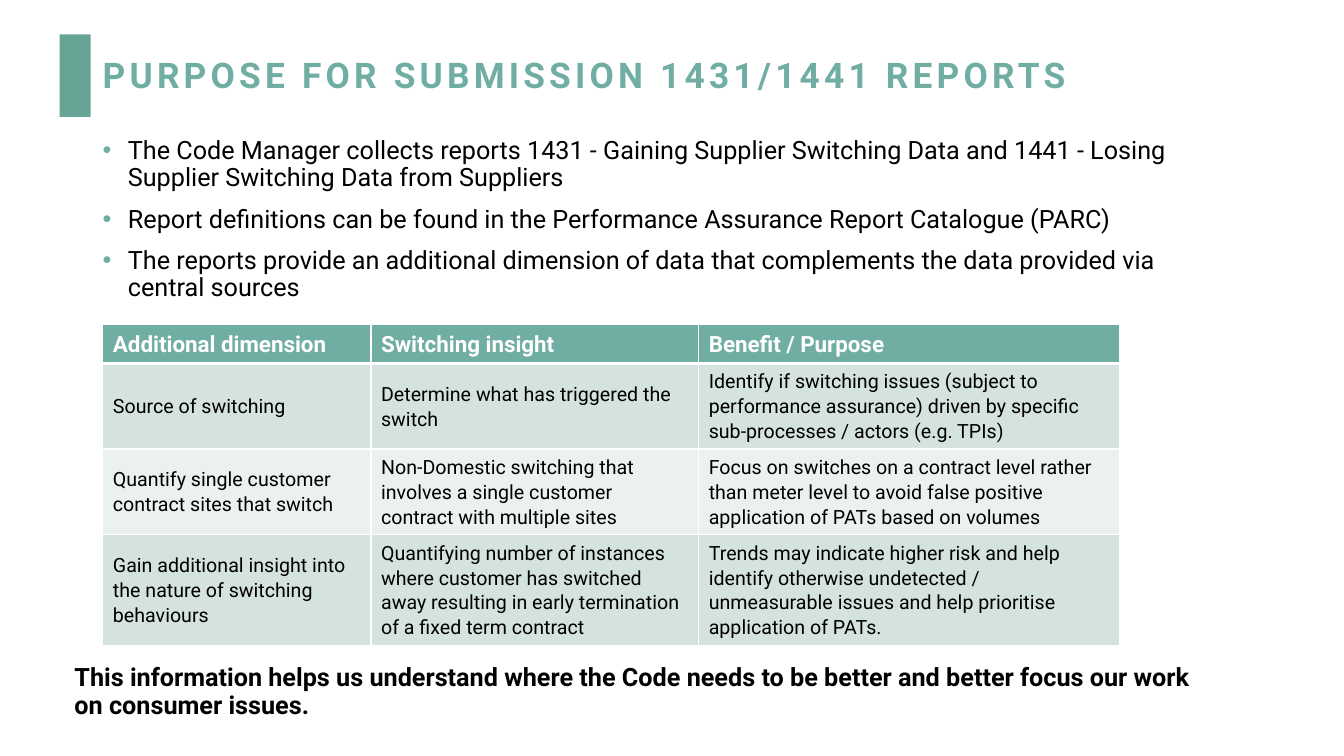
from dataclasses import dataclass

from lxml.etree import SubElement
from pptx import Presentation
from pptx.dml.color import RGBColor
from pptx.enum.shapes import MSO_SHAPE
from pptx.enum.text import MSO_ANCHOR
from pptx.oxml.ns import qn
from pptx.slide import Slide
from pptx.table import _Cell
from pptx.text.text import TextFrame
from pptx.util import Inches, Pt

GREEN = "70ADA3"
BLACK = "000000"
WHITE = "FFFFFF"
PALE = "D5E3E0"
LIGHT = "EBF1F0"


@dataclass
class Style:
    size: float
    color: str = BLACK
    bold: bool = False
    line: float = 0.9
    before: float = 0
    after: float = 0
    track: int = 0
    bullet: bool = False


@dataclass
class Block:
    left: float
    top: float
    width: float
    height: float
    style: Style
    lines: list[str]
    anchor: MSO_ANCHOR = MSO_ANCHOR.TOP


@dataclass
class Row:
    height: float
    fill: str
    style: Style
    texts: list[str]


HEAD = Style(16, WHITE, True, 1.07, after=8)
CELL = Style(14, line=1.07, after=8)

BLOCKS = [
    Block(0.92, 0.4, 10.15, 0.72, Style(25.2, GREEN, True, track=300),
          ["PURPOSE FOR SUBMISSION 1431/1441 REPORTS"], MSO_ANCHOR.MIDDLE),
    Block(0.92, 1.32, 11.39, 2.03, Style(18, before=10, bullet=True), [
        "The Code Manager collects reports 1431 - Gaining Supplier Switching Data "
        "and 1441 - Losing Supplier Switching Data from Suppliers",
        "Report definitions can be found in the Performance Assurance Report Catalogue (PARC)",
        "The reports provide an additional dimension of data that complements "
        "the data provided via central sources",
    ]),
    Block(0.64, 6.55, 11.39, 0.73, Style(18, bold=True), [
        "This information helps us understand where the Code needs to be better "
        "and better focus our work on consumer issues.",
    ]),
]

WIDTHS = [2.66, 3.25, 4.17]
ROWS = [
    Row(0.38, GREEN, HEAD, ["Additional dimension", "Switching insight", "Benefit / Purpose"]),
    Row(0.83, PALE, CELL, [
        "Source of switching",
        "Determine what has triggered the switch",
        "Identify if switching issues (subject to performance assurance) "
        "driven by specific sub-processes / actors (e.g. TPIs)",
    ]),
    Row(0.83, LIGHT, CELL, [
        "Quantify single customer contract sites that switch",
        "Non-Domestic switching that involves a single customer contract with multiple sites",
        "Focus on switches on a contract level rather than meter level "
        "to avoid false positive application of PATs based on volumes",
    ]),
    Row(1.08, PALE, CELL, [
        "Gain additional insight into the nature of switching behaviours",
        "Quantifying number of instances where customer has switched away "
        "resulting in early termination of a fixed term contract",
        "Trends may indicate higher risk and help identify otherwise undetected / "
        "unmeasurable issues and help prioritise application of PATs.",
    ]),
]


def paint(color: str) -> RGBColor:
    return RGBColor.from_string(color)


def write(frame: TextFrame, lines: list[str], style: Style) -> None:
    for i, line in enumerate(lines):
        para = frame.add_paragraph() if i else frame.paragraphs[0]
        if style.bullet:
            props = para._p.get_or_add_pPr()
            props.set("marL", str(Inches(0.25)))
            props.set("indent", str(Inches(-0.25)))
            tint = SubElement(props, qn("a:buClr"))
            SubElement(tint, qn("a:srgbClr"), val=GREEN)
            SubElement(props, qn("a:buFont"), typeface="Arial")
            SubElement(props, qn("a:buChar"), char="•")
        para.line_spacing = style.line
        para.space_before = Pt(style.before if i else 0)
        para.space_after = Pt(style.after)
        run = para.add_run()
        run.text = line
        font = run.font
        font.name = "Roboto"
        font.size = Pt(style.size)
        font.bold = style.bold
        font.color.rgb = paint(style.color)
        if style.track:
            run._r.get_or_add_rPr().set("spc", str(style.track))


def add_block(slide: Slide, block: Block) -> None:
    box = slide.shapes.add_textbox(Inches(block.left), Inches(block.top),
                                   Inches(block.width), Inches(block.height))
    frame = box.text_frame
    frame.word_wrap = True
    frame.vertical_anchor = block.anchor
    write(frame, block.lines, block.style)


def edge(cell: _Cell, top: float, base: float) -> None:
    props = cell._tc.get_or_add_tcPr()
    for side, width in (("L", 1), ("R", 1), ("T", top), ("B", base)):
        line = SubElement(props, qn(f"a:ln{side}"), w=str(Pt(width)))
        fill = SubElement(line, qn("a:solidFill"))
        SubElement(fill, qn("a:srgbClr"), val=WHITE)


def add_grid(slide: Slide) -> None:
    height = sum(row.height for row in ROWS)
    table = slide.shapes.add_table(len(ROWS), len(WIDTHS), Inches(1.02), Inches(3.22),
                                   Inches(sum(WIDTHS)), Inches(height)).table
    for col, width in zip(table.columns, WIDTHS):
        col.width = Inches(width)
    for r, row in enumerate(ROWS):
        table.rows[r].height = Inches(row.height)
        for c, text in enumerate(row.texts):
            cell = table.cell(r, c)
            edge(cell, 3 if r == 1 else 1, 3 if r == 0 else 1)
            cell.fill.solid()
            cell.fill.fore_color.rgb = paint(row.fill)
            cell.vertical_anchor = MSO_ANCHOR.MIDDLE
            write(cell.text_frame, [text], row.style)


def add_bar(slide: Slide) -> None:
    bar = slide.shapes.add_shape(MSO_SHAPE.RECTANGLE, Inches(0.59), Inches(0.34),
                                 Inches(0.31), Inches(0.82))
    bar.shadow.inherit = False
    bar.fill.solid()
    bar.fill.fore_color.rgb = paint("68A495")
    bar.line.fill.background()


def main() -> None:
    deck = Presentation()
    deck.slide_width = Inches(13.33)
    deck.slide_height = Inches(7.5)
    slide = deck.slides.add_slide(deck.slide_layouts[6])
    add_bar(slide)
    for block in BLOCKS:
        add_block(slide, block)
    add_grid(slide)
    deck.save("out.pptx")


if __name__ == "__main__":
    main()
